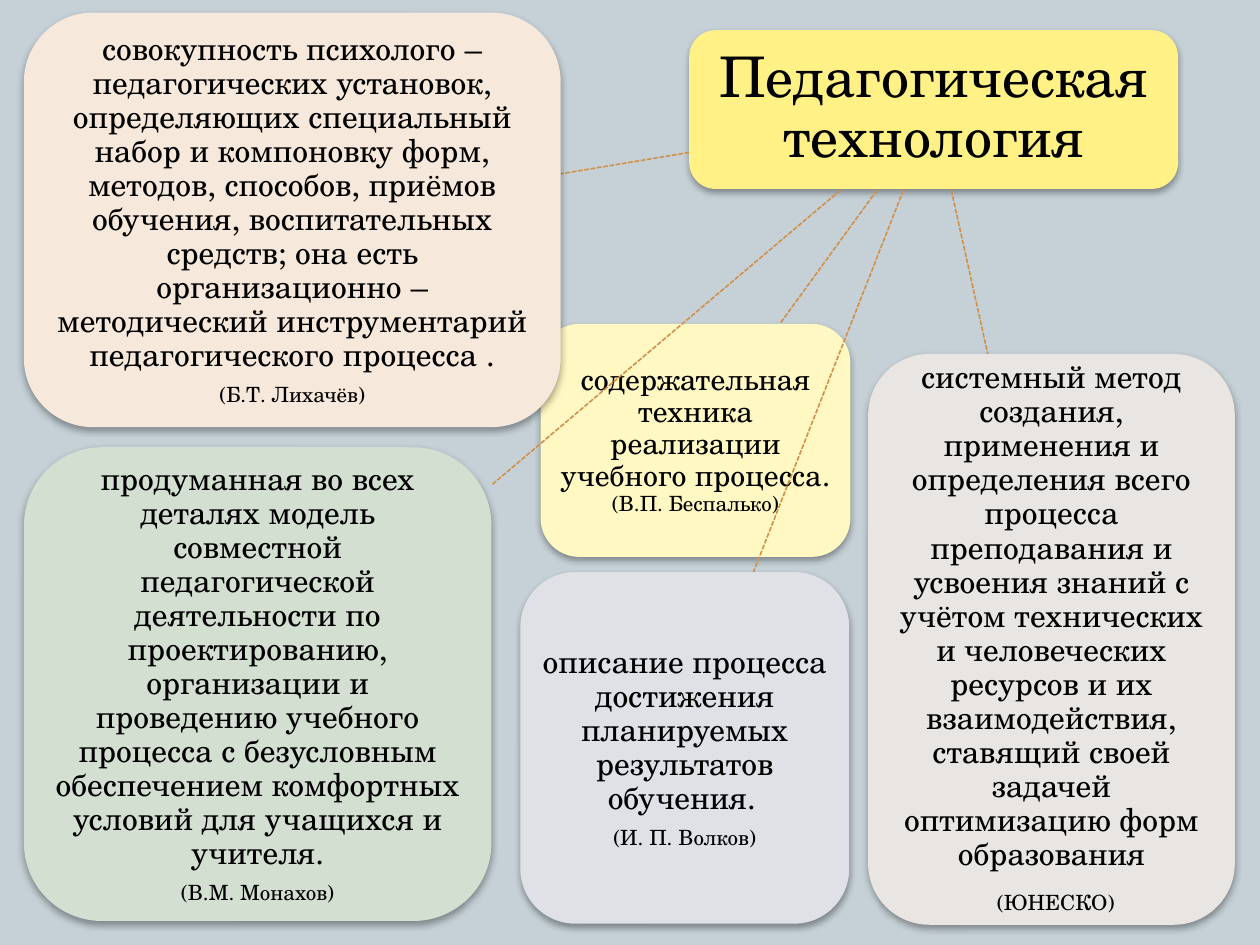
from dataclasses import dataclass
from lxml.etree import SubElement as Sub
from pptx import Presentation
from pptx.dml.color import RGBColor as Rgb
from pptx.enum.dml import MSO_LINE as Dash
from pptx.enum.shapes import MSO_CONNECTOR as Link, MSO_SHAPE as Form
from pptx.enum.text import MSO_ANCHOR as Anchor, PP_ALIGN as Align
from pptx.oxml.ns import qn
from pptx.util import Inches, Pt


@dataclass(frozen=True)
class Theme:
    font: str = "TeX Gyre Schola"
    back: str = "C5D1D7"
    ink: str = "000000"
    wire: str = "D19049"
    gold: str = "FFF185"
    cream: str = "FFF8C2"
    mist: str = "DFE1E7"
    stone: str = "E8E5E2"
    sage: str = "D2DFD1"
    peach: str = "F6E9DB"
    head: int = 32
    body: int = 18
    tight: int = 17
    note: int = 12


def apply(item, form):
    for key, value in form.items():
        setattr(item, key, value)


class Board:
    def __init__(self, slide, theme):
        self.slide, self.theme = slide, theme
        fill = slide.background.fill
        fill.solid()
        fill.fore_color.rgb = Rgb.from_string(theme.back)

    def shade(self, shape):
        shape.shadow.inherit = False
        glow = Sub(shape._element.spPr.find(qn("a:effectLst")), qn("a:outerShdw"),
                   blurRad=str(Pt(4)), dist=str(Pt(2)), dir="5400000",
                   algn="ctr", rotWithShape="0")
        tint = Sub(glow, qn("a:srgbClr"), val=self.theme.ink)
        Sub(tint, qn("a:alpha"), val="35000")

    def text(self, para, runs):
        apply(para, {"alignment": Align.CENTER, "line_spacing": 0.9})
        after = Sub(para._p.get_or_add_pPr(), qn("a:spcAft"))
        Sub(after, qn("a:spcPct"), val="35000")
        for words, size in runs:
            run = para.add_run()
            run.text = words
            apply(run.font, {"name": self.theme.font, "size": Pt(size)})
            run.font.color.rgb = Rgb.from_string(self.theme.ink)

    def box(self, place, color, paras, pad=0.05):
        shape = self.slide.shapes.add_shape(Form.ROUNDED_RECTANGLE, *map(Inches, place))
        shape.fill.solid()
        shape.fill.fore_color.rgb = Rgb.from_string(color)
        shape.line.fill.background()
        self.shade(shape)
        frame = shape.text_frame
        apply(frame, {"word_wrap": True, "vertical_anchor": Anchor.MIDDLE})
        sides = ("left", "top", "right", "bottom")
        apply(frame, {f"margin_{side}": Inches(pad) for side in sides})
        for index, runs in enumerate(paras):
            para = frame.add_paragraph() if index else frame.paragraphs[0]
            self.text(para, runs)

    def line(self, start, end):
        wire = self.slide.shapes.add_connector(Link.STRAIGHT, *map(Inches, start + end))
        wire.line.color.rgb = Rgb.from_string(self.theme.wire)
        apply(wire.line, {"width": Pt(0.9), "dash_style": Dash.SQUARE_DOT})
        Sub(wire._element.spPr, qn("a:effectLst"))


def main():
    deck = Presentation()
    apply(deck, {"slide_width": Inches(10), "slide_height": Inches(7.5)})
    theme = Theme()
    board = Board(deck.slides.add_slide(deck.slide_layouts[6]), theme)
    body, note = theme.body, theme.note

    board.box((5.47, 0.24, 3.88, 1.26), theme.gold,
              [[("Педагогическая технология", theme.head)]], 0.09)
    views = [
        ((6.96, 1.51), (6.19, 2.57), (4.29, 2.57, 2.46, 1.85), theme.cream,
         [[("содержательная техника реализации учебного процесса. ", theme.tight),
           ("(В.П. Беспалько)", note)]]),
        ((7.17, 1.51), (5.98, 4.54), (4.13, 4.54, 2.61, 2.79), theme.mist,
         [[("описание процесса достижения планируемых результатов обучения.", body),
           (" ", note)],
          [("(И. П. Волков)", note)]]),
        ((7.55, 1.51), (7.84, 2.81), (6.89, 2.81, 2.91, 4.53), theme.stone,
         [[("системный метод создания, применения и определения всего процесса "
            "преподавания и усвоения знаний с учётом технических и человеческих "
            "ресурсов и их взаимодействия, ставящий своей задачей оптимизацию "
            "форм образования", body)],
          [(" ", body), ("(ЮНЕСКО)", note)]]),
        ((6.67, 1.51), (3.9, 3.85), (0.19, 3.55, 3.71, 3.76), theme.sage,
         [[("продуманная во всех деталях модель совместной педагогической "
            "деятельности по проектированию, организации и проведению учебного "
            "процесса с безусловным обеспечением комфортных условий для учащихся "
            "и учителя.", body)],
          [(" (В.М. Монахов) ", note)]]),
        ((5.47, 1.21), (4.45, 1.38), (0.19, 0.1, 4.26, 3.29), theme.peach,
         [[("совокупность психолого – педагогических установок, определяющих "
            "специальный набор и компоновку форм, методов, способов, приёмов "
            "обучения, воспитательных средств; она есть организационно – "
            "методический инструментарий педагогического процесса .", body)],
          [("(Б.Т. Лихачёв)", note)]]),
    ]
    for start, end, place, color, paras in views:
        board.line(start, end)
        board.box(place, color, paras)
    deck.save("out.pptx")


if __name__ == "__main__":
    main()
